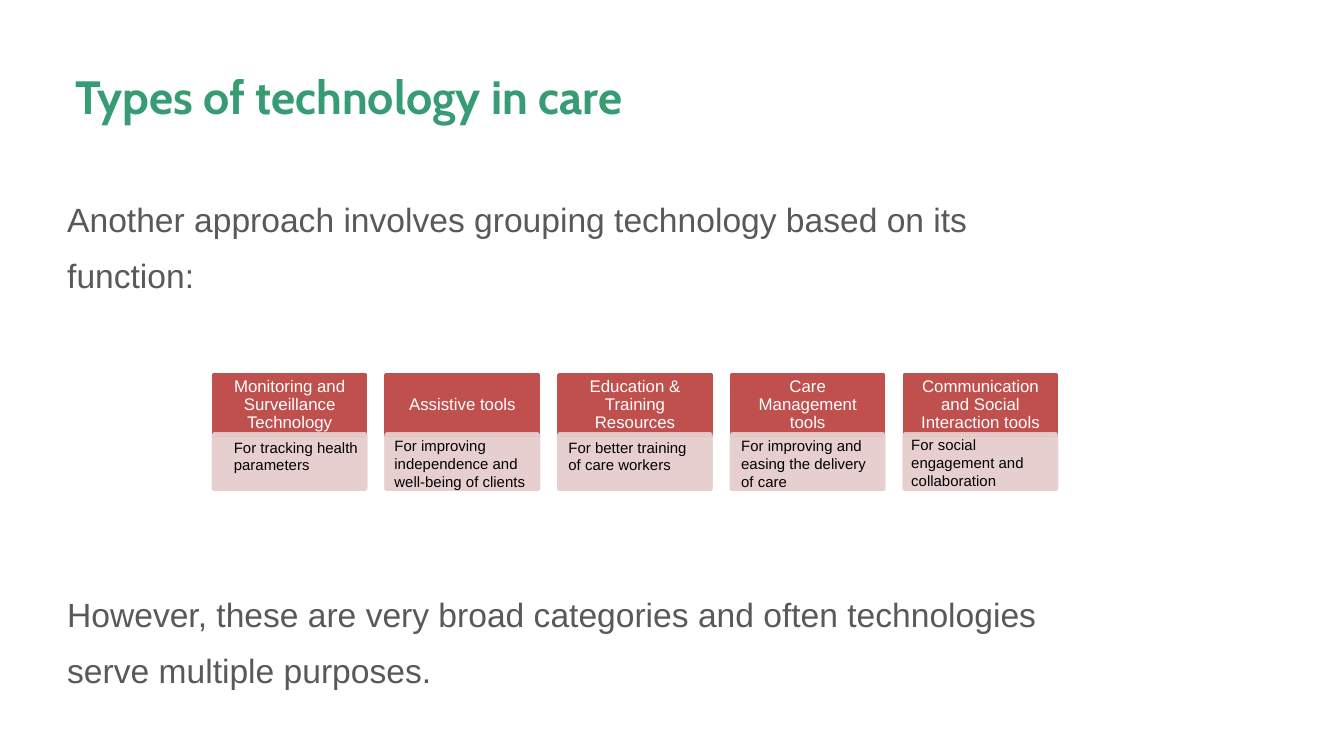
from lxml import etree
from pptx import Presentation
from pptx.dml.color import RGBColor
from pptx.enum.shapes import MSO_SHAPE as Shape
from pptx.enum.text import MSO_ANCHOR as Anchor, PP_ALIGN as Align
from pptx.oxml.ns import qn
from pptx.util import Inches, Pt

GREEN, GREY, RED, PINK = "379C73", "595959", "BF504D", "E7CFCF"
WHITE, BLACK = "FFFFFF", "000000"

COLUMN_PITCH, COLUMN_WIDTH = 1.285, 1.13
HEADER_HEIGHT, PANEL_HEIGHT = 0.44, 0.41

# Category, purpose, and the purpose text's x, y offset from its panel and width
CATEGORIES = [
    ("Monitoring and Surveillance Technology", "For tracking health parameters", 0.1, 0.01, 1.06),
    ("Assistive tools", "For improving independence and well-being of clients", 0.01, 0, 1.24),
    ("Education & Training Resources", "For better training of care workers", 0.02, 0.01, 1.04),
    ("Care Management tools", "For improving and easing the delivery of care", 0.02, 0, 1.13),
    ("Communication and Social Interaction tools", "For social engagement and collaboration", 0, -0.01, 0.99),
]


def rgb(hex_color):
    return RGBColor.from_string(hex_color)


def place(shape, left, top, width, height):
    shape.left, shape.top = Inches(left), Inches(top)
    shape.width, shape.height = Inches(width), Inches(height)


def set_frame(frame, across, down, anchor=Anchor.TOP):
    frame.word_wrap = True
    frame.vertical_anchor = anchor
    frame.margin_left = frame.margin_right = Inches(across)
    frame.margin_top = frame.margin_bottom = Inches(down)


def write(paragraph, text, size, color, font="Arial", bold=False,
          align=Align.LEFT, spacing=1.0, before=0):
    paragraph.alignment = align
    paragraph.line_spacing = spacing
    paragraph.space_before = Pt(before)
    run = paragraph.add_run()
    run.text = text
    run.font.name, run.font.size, run.font.bold = font, Pt(size), bold
    run.font.color.rgb = rgb(color)


def remove_bullet(paragraph):
    properties = paragraph._p.get_or_add_pPr()
    properties.set("marL", "0")
    properties.set("indent", "0")
    etree.SubElement(properties, qn("a:buNone"))


def add_block(slide, left, top, height, color, opacity=100):
    block = slide.shapes.add_shape(
        Shape.RECTANGLE, Inches(left), Inches(top), Inches(COLUMN_WIDTH), Inches(height))
    block.shadow.inherit = False
    block.fill.solid()
    block.fill.fore_color.rgb = rgb(color)
    block.line.color.rgb = rgb(color)
    block.line.width = Pt(2)
    if opacity < 100:
        for tint in block._element.spPr.iter(qn("a:srgbClr")):
            etree.SubElement(tint, qn("a:alpha"), val=str(opacity * 1000))
    return block


def fill_title(title, left, top, width, height):
    place(title, left, top, width, height)
    set_frame(title.text_frame, 0, 0)
    write(title.text_frame.paragraphs[0], "Types of technology in care",
          25, GREEN, font="Cabin", bold=True, spacing=1.4)


def fill_body(body, left, top, width, height):
    """Intro and closing remark, with a gap between them for the categories."""
    place(body, left, top, width, height)
    frame = body.text_frame
    set_frame(frame, 0, 0)
    intro, closing = frame.paragraphs[0], frame.add_paragraph()
    write(intro, "Another approach involves grouping technology based on its function:",
          18, GREY, spacing=1.4)
    write(closing, "However, these are very broad categories and often technologies "
          "serve multiple purposes.", 18, GREY, spacing=1.4, before=151)
    for paragraph in (intro, closing):
        remove_bullet(paragraph)


def add_panel(slide, left, top):
    add_block(slide, left, top, PANEL_HEIGHT, PINK, opacity=90)


def add_category(slide, left, top, name, purpose, dx, dy, purpose_width):
    header = add_block(slide, left, top, HEADER_HEIGHT + 0.01, RED)
    set_frame(header.text_frame, 0.07, 0.04, Anchor.MIDDLE)
    write(header.text_frame.paragraphs[0], name, 9, WHITE,
          align=Align.CENTER, spacing=0.9)

    panel_top = top + HEADER_HEIGHT
    add_panel(slide, left, panel_top)
    label = slide.shapes.add_textbox(
        Inches(left + dx), Inches(panel_top + dy), Inches(purpose_width), Inches(0.45))
    set_frame(label.text_frame, 0.05, 0.02)
    write(label.text_frame.paragraphs[0], purpose, 8, BLACK)


def add_categories(slide, left, top):
    """Columns of header and purpose over a row of translucent backing panels."""
    lefts = [left + column * COLUMN_PITCH for column in range(len(CATEGORIES))]
    for column_left in lefts:
        add_panel(slide, column_left, top + HEADER_HEIGHT)
    for column_left, category in zip(lefts, CATEGORIES):
        add_category(slide, column_left, top, *category)


def main():
    deck = Presentation()
    deck.slide_width = Inches(10)
    deck.slide_height = deck.slide_width * 9 // 16
    slide = deck.slides.add_slide(deck.slide_layouts[1])
    fill_title(slide.shapes.title, 0.56, 0.34, 7.94, 0.59)
    fill_body(slide.placeholders[1], 0.5, 1.36, 7.44, 3.82)
    add_categories(slide, 1.59, 2.79)
    deck.save("out.pptx")


if __name__ == "__main__":
    main()
